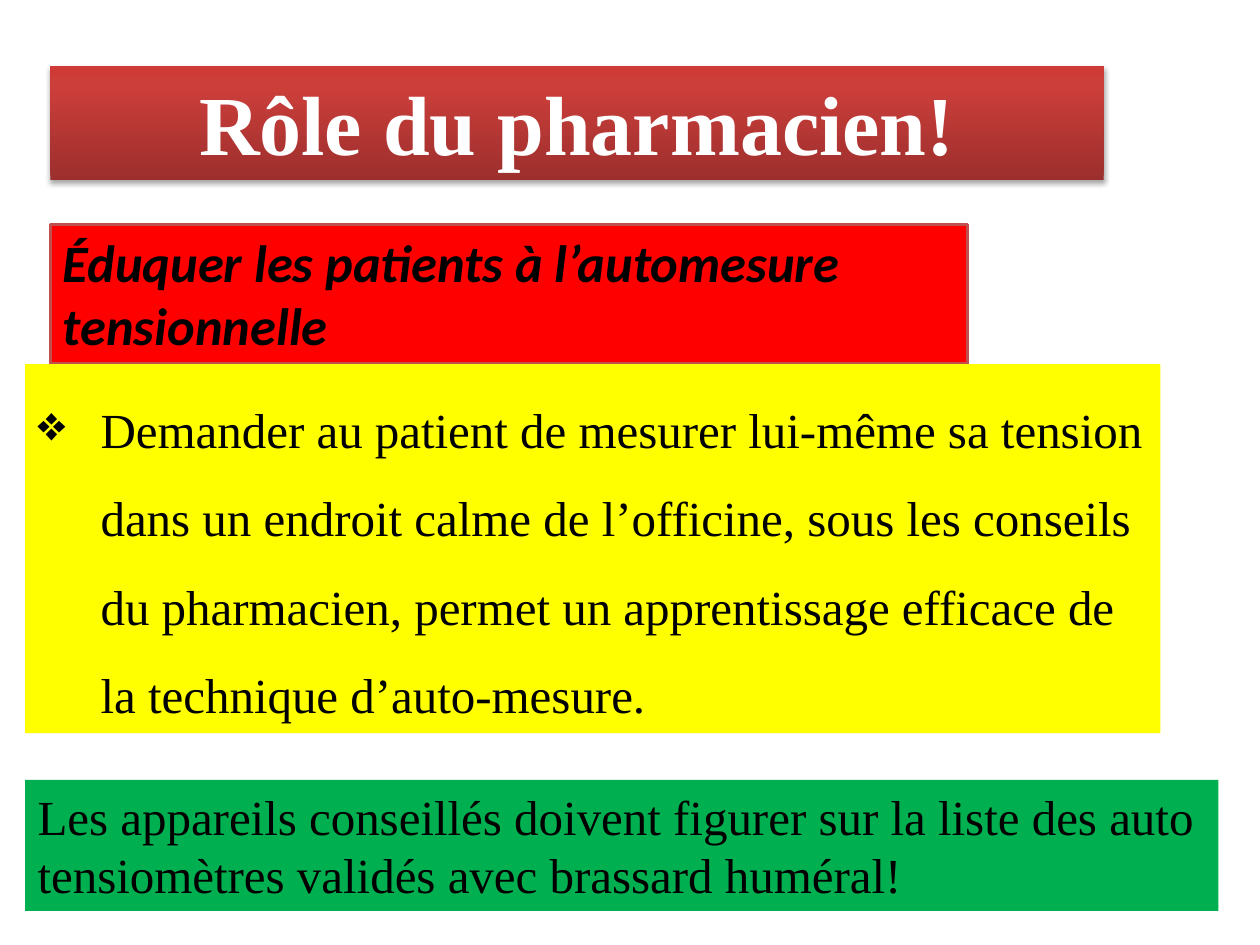
from dataclasses import dataclass

from lxml import etree
from pptx import Presentation
from pptx.dml.color import RGBColor
from pptx.enum import shapes, text
from pptx.oxml import parse_xml
from pptx.oxml.ns import nsdecls, qn
from pptx.util import Pt


@dataclass(frozen=True)
class Theme:
    serif: str = "Times New Roman"
    sans: str = "Calibri"
    title_size: int = 48
    heading_size: int = 30
    body_size: int = 28
    white: str = "FFFFFF"
    black: str = "000000"
    red: str = "FF0000"
    red_border: str = "C0504D"
    yellow: str = "FFFF00"
    green: str = "00B050"
    title_stops: tuple = ((0, "9C2F2D"), (80, "CB3E3A"), (100, "CE3B37"))


THEME = Theme()

PANELS = [
    dict(
        words="Rôle du pharmacien!",
        place=(28.8, 37.44, 601.92, 65.52),
        stops=THEME.title_stops,
        shadow=True,
        style=dict(size=THEME.title_size, color=THEME.white, bold=True,
                   align=text.PP_ALIGN.CENTER),
    ),
    dict(
        words="Éduquer les patients à l’automesure tensionnelle",
        place=(28.8, 128.16, 524.16, 79.92),
        fill=THEME.red,
        border=THEME.red_border,
        style=dict(size=THEME.heading_size, font=THEME.sans, bold=True, italic=True),
    ),
    dict(
        words="Demander au patient de mesurer lui-même sa tension dans un endroit "
              "calme de l’officine, sous les conseils du pharmacien, permet un "
              "apprentissage efficace de la technique d’auto-mesure.",
        place=(14.4, 208.08, 648.72, 210.96),
        fill=THEME.yellow,
        style=dict(spacing=1.5, bullet="❖", indent=36),
    ),
    dict(
        words="Les appareils conseillés doivent figurer sur la liste des auto "
              "tensiomètres validés avec brassard huméral!",
        place=(14.4, 445.68, 681.84, 74.88),
        fill=THEME.green,
        style=dict(),
    ),
]


def write_text(box, words, size=THEME.body_size, font=THEME.serif, color=THEME.black,
               bold=False, italic=False, align=text.PP_ALIGN.LEFT, spacing=None,
               bullet=None, indent=0):
    frame = box.text_frame
    frame.word_wrap = True
    frame.auto_size = text.MSO_AUTO_SIZE.SHAPE_TO_FIT_TEXT
    frame.vertical_anchor = text.MSO_ANCHOR.TOP
    para = frame.paragraphs[0]
    para.alignment = align
    if spacing:
        para.line_spacing = spacing
    if bullet:
        properties = para._p.get_or_add_pPr()
        properties.set("marL", str(Pt(indent)))
        properties.set("indent", str(-Pt(indent)))
        etree.SubElement(properties, qn("a:buChar"), char=bullet)
    span = para.add_run()
    span.text = words
    span.font.name = font
    span.font.size = Pt(size)
    span.font.bold = bold
    span.font.italic = italic
    span.font.color.rgb = RGBColor.from_string(color)


def fill_gradient(box, stops):
    box.fill.gradient()
    box.fill.gradient_angle = 90
    stop_list = box._element.spPr.find(".//" + qn("a:gsLst"))
    for stop in list(stop_list):
        stop_list.remove(stop)
    for position, color in stops:
        stop = etree.SubElement(stop_list, qn("a:gs"), pos=str(position * 1000))
        etree.SubElement(stop, qn("a:srgbClr"), val=color)


def add_shadow(box):
    effects = box._element.spPr.find(qn("a:effectLst"))
    effects.append(parse_xml(
        f'<a:outerShdw {nsdecls("a")} blurRad="{Pt(3.1)}" dist="{Pt(1.8)}" '
        f'dir="5400000" rotWithShape="0"><a:srgbClr val="{THEME.black}">'
        '<a:alpha val="35000"/></a:srgbClr></a:outerShdw>'))


def add_panel(page, words, place, style, fill=None, stops=None, border=None, shadow=False):
    box = page.shapes.add_shape(shapes.MSO_SHAPE.RECTANGLE, *map(Pt, place))
    box.shadow.inherit = False
    if stops:
        fill_gradient(box, stops)
    else:
        box.fill.solid()
        box.fill.fore_color.rgb = RGBColor.from_string(fill)
    if border:
        box.line.color.rgb = RGBColor.from_string(border)
        box.line.width = Pt(2)
    else:
        box.line.fill.background()
    if shadow:
        add_shadow(box)
    write_text(box, words, **style)


def main():
    deck = Presentation()
    deck.slide_width, deck.slide_height = Pt(720), Pt(540)
    page = deck.slides.add_slide(deck.slide_layouts[6])
    for panel in PANELS:
        add_panel(page, **panel)
    deck.save("out.pptx")


if __name__ == "__main__":
    main()
